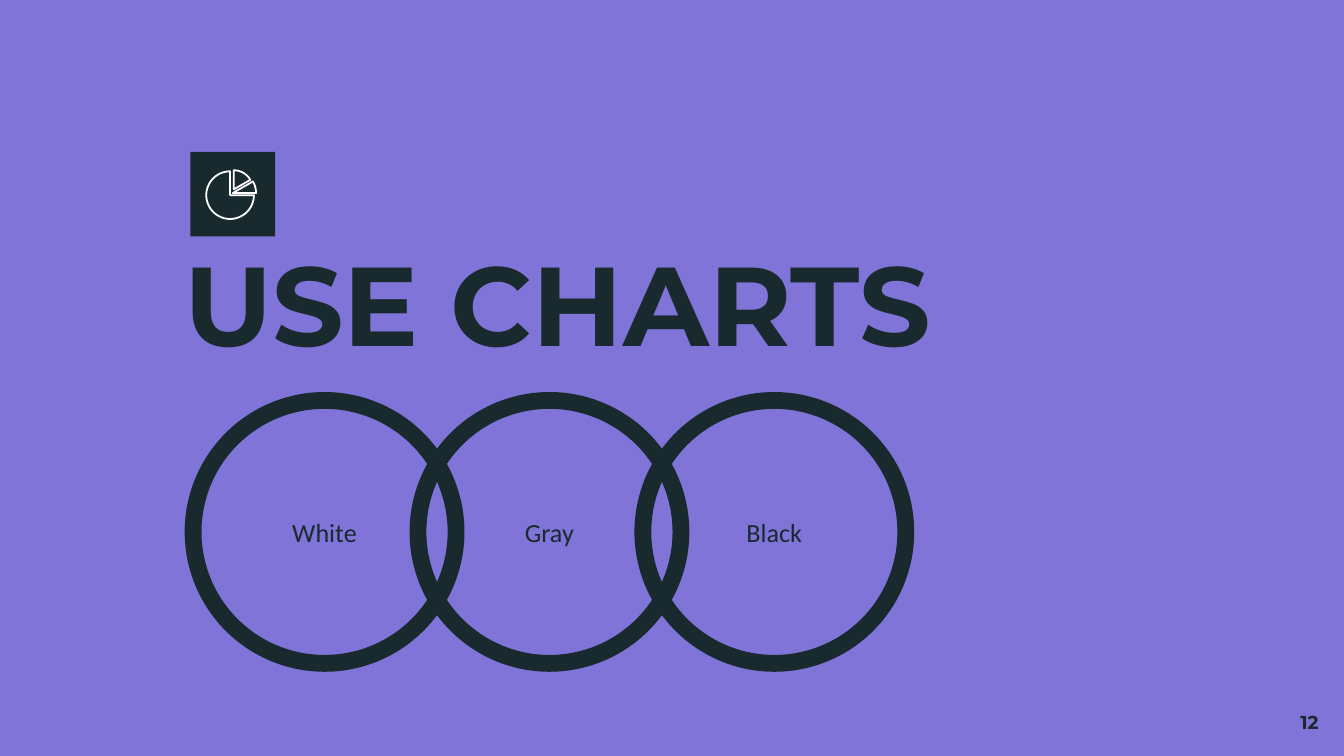
from math import cos, radians, sin

from pptx import Presentation
from pptx.dml.color import RGBColor
from pptx.enum.shapes import MSO_SHAPE
from pptx.enum.text import MSO_ANCHOR, MSO_AUTO_SIZE, PP_ALIGN
from pptx.util import Cm, Pt

LEFT, CENTER, RIGHT = PP_ALIGN.LEFT, PP_ALIGN.CENTER, PP_ALIGN.RIGHT
TOP, MIDDLE = MSO_ANCHOR.TOP, MSO_ANCHOR.MIDDLE
RECTANGLE, OVAL = MSO_SHAPE.RECTANGLE, MSO_SHAPE.OVAL
NO_AUTOFIT = MSO_AUTO_SIZE.NONE
TITLE_ONLY = 5

COLORS = {"background": "8074D9", "dark": "182A2E", "icon": "FFFFFF"}


def color(name):
    return RGBColor.from_string(COLORS[name])


def write_text(shape, text, font="Montserrat", size=10, bold=False,
               align=LEFT, anchor=TOP, line_spacing=1.0):
    frame = shape.text_frame
    frame.word_wrap = True
    frame.auto_size = NO_AUTOFIT
    frame.vertical_anchor = anchor
    frame.margin_left = frame.margin_right = Cm(0.25)
    frame.margin_top = frame.margin_bottom = Cm(0.25)
    paragraph = frame.paragraphs[0]
    paragraph.alignment = align
    paragraph.line_spacing = line_spacing
    run = paragraph.add_run()
    run.text = text
    run.font.name = font
    run.font.size = Pt(size)
    run.font.bold = bold
    run.font.color.rgb = color("dark")


presentation = Presentation()
presentation.slide_width = Cm(25.4)
presentation.slide_height = Cm(14.29)
slide = presentation.slides.add_slide(presentation.slide_layouts[TITLE_ONLY])
slide.background.fill.solid()
slide.background.fill.fore_color.rgb = color("background")

# Icon tile
tile = slide.shapes.add_shape(RECTANGLE, Cm(3.6), Cm(2.87), Cm(1.6), Cm(1.6))
tile.shadow.inherit = False
tile.fill.solid()
tile.fill.fore_color.rgb = color("dark")
tile.line.fill.background()

# Title
title = slide.shapes.title
title.left, title.top, title.width, title.height = Cm(3.23), Cm(4.47), Cm(18.9), Cm(5.36)
write_text(title, "USE CHARTS", size=60, bold=True, line_spacing=0.9)

# Overlapping rings
RING_LEFT, RING_TOP, RING_SIZE, RING_PITCH = 3.65, 7.57, 4.97, 4.25
for index, label in enumerate(["White", "Gray", "Black"]):
    ring = slide.shapes.add_shape(OVAL, Cm(RING_LEFT + index * RING_PITCH), Cm(RING_TOP),
                                  Cm(RING_SIZE), Cm(RING_SIZE))
    ring.shadow.inherit = False
    ring.fill.background()
    ring.line.color.rgb = color("dark")
    ring.line.width = Pt(9)
    write_text(ring, label, font="Calibri", size=14, align=CENTER, anchor=MIDDLE)

# Pie icon: tip x, tip y, radius, start and end angle (clockwise from the right)
SLICES = [
    (4.35, 3.69, 0.45, 0, 270),
    (4.42, 3.58, 0.36, 270, 330),
    (4.4, 3.65, 0.44, 330, 360),
]
icon = slide.shapes.add_group_shape()
for tip_x, tip_y, radius, start, end in SLICES:
    arc = [(Cm(tip_x + radius * cos(radians(angle))), Cm(tip_y + radius * sin(radians(angle))))
           for angle in range(start, end + 1, 5)]
    builder = icon.shapes.build_freeform(Cm(tip_x), Cm(tip_y))
    builder.add_line_segments(arc, close=True)
    pie_slice = builder.convert_to_shape()
    pie_slice.shadow.inherit = False
    pie_slice.fill.background()
    pie_slice.line.color.rgb = color("icon")
    pie_slice.line.width = Pt(0.96)

# Slide number
number = slide.shapes.add_textbox(Cm(23.65), Cm(13.18), Cm(1.52), Cm(1.09))
write_text(number, "12", bold=True, align=RIGHT)

presentation.save("out.pptx")
